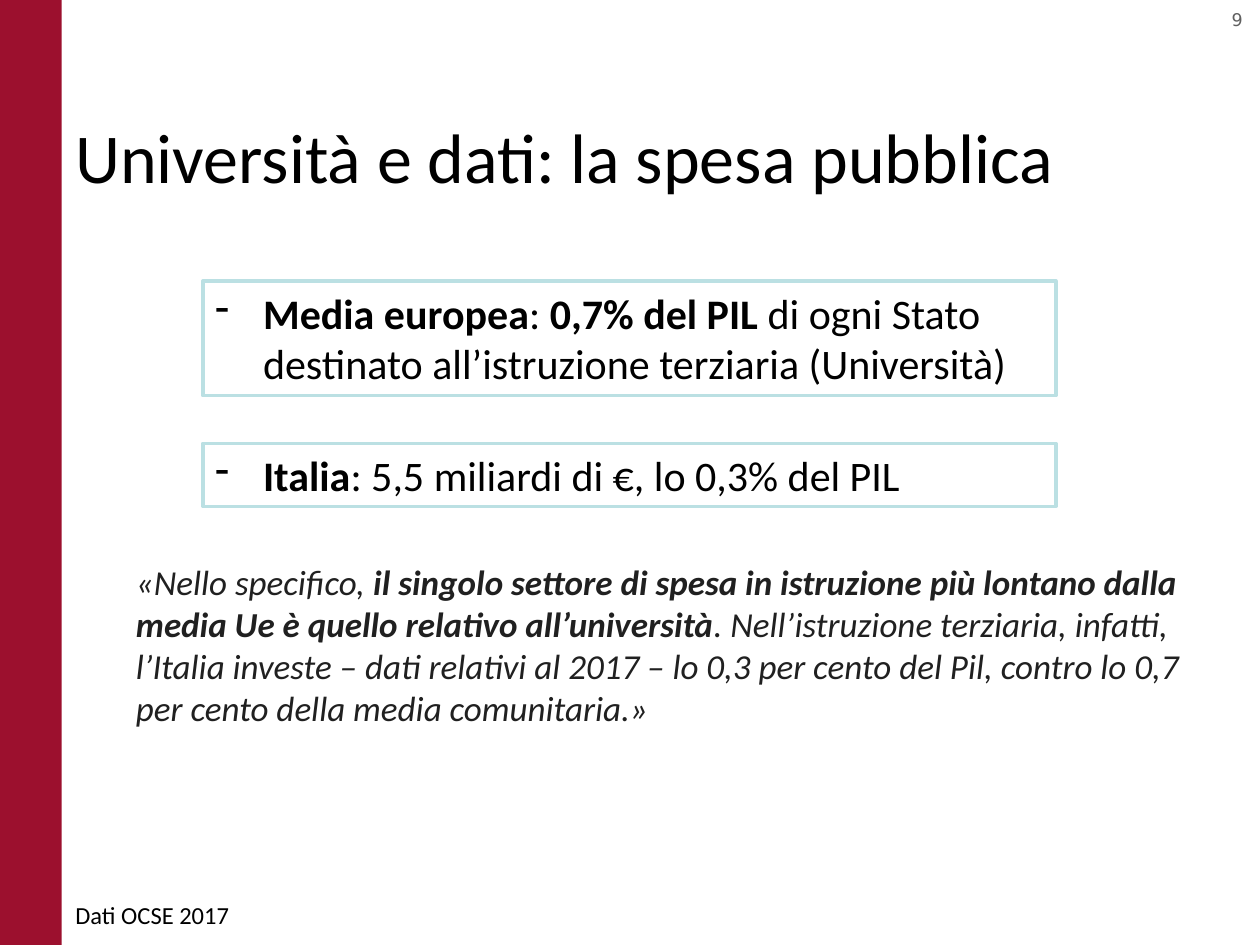
import pptx
import pptx.util
import pptx.dml.color
import pptx.enum.shapes
import pptx.enum.text
import pptx.oxml
import pptx.oxml.ns
from pptx.util import Inches

HUES = {"bar": "9C102E", "edge": "BBE0E3", "paper": "FFFFFF",
        "ink": "000000", "quote": "202020", "page": "606060"}
RECT = pptx.enum.shapes.MSO_SHAPE.RECTANGLE
ALIGN = pptx.enum.text.PP_ALIGN
ANCHOR = pptx.enum.text.MSO_ANCHOR


def tint(name):
    """Return the named colour."""
    return pptx.dml.color.RGBColor.from_string(HUES[name])


def write(shape, runs, size, hue="ink", face="Calibri", align=ALIGN.LEFT,
          anchor=ANCHOR.TOP, italic=False, dash=False):
    """Fill a shape with one paragraph of (text, bold) runs."""
    frame = shape.text_frame
    frame.word_wrap = True
    frame.vertical_anchor = anchor
    para = frame.paragraphs[0]
    para.alignment = align
    if dash:
        props = para._p.get_or_add_pPr()
        props.set("marL", str(Inches(0.38)))
        props.set("indent", str(-Inches(0.38)))
        mark = pptx.oxml.parse_xml(
            f'<a:buChar {pptx.oxml.ns.nsdecls("a")} char="-"/>')
        props.append(mark)
    font = para.font
    font.name, font.size, font.italic = face, pptx.util.Pt(size), italic
    font.color.rgb = tint(hue)
    for text, bold in runs:
        run = para.add_run()
        run.text = text
        if bold:
            run.font.bold = True


def add_text(slide, box, runs, size, **style):
    """Place a text box."""
    shape = slide.shapes.add_textbox(*map(Inches, box))
    write(shape, runs, size, **style)


def add_rect(slide, box, fill, edge=None):
    """Place a plain rectangle and return it."""
    shape = slide.shapes.add_shape(RECT, *map(Inches, box))
    shape.shadow.inherit = False
    shape.fill.solid()
    shape.fill.fore_color.rgb = tint(fill)
    if edge:
        shape.line.color.rgb = tint(edge)
        shape.line.width = pptx.util.Pt(2)
    else:
        shape.line.fill.background()
    return shape


def add_frame(slide, box):
    """Place the side bar, page number, title and source line."""
    left, top, wide, high = box
    add_rect(slide, (left, top, 0.49, high), "bar")
    add_text(slide, (left + wide - 0.53, top + 0.02, 0.49, 0.27),
             [("9", False)], 10, hue="page", face="DejaVu Sans",
             align=ALIGN.RIGHT)
    add_text(slide, (left + 0.5, top + 0.61, wide - 1, 1.25),
             [("Università e dati: la spesa pubblica", False)], 40,
             anchor=ANCHOR.MIDDLE)
    add_text(slide, (left + 0.5, top + high - 0.41, 8.44, 0.29),
             [("Dati OCSE 2017", False)], 14)


def add_facts(slide, box):
    """Stack the outlined facts inside the box."""
    left, top, wide, high = box
    facts = [
        (0.91, [("Media europea", True), (": ", False),
                ("0,7% del PIL ", True),
                ("di ogni Stato destinato all’istruzione terziaria "
                 "(Università)", False)]),
        (0.5, [("Italia", True),
               (": 5,5 miliardi di €, lo 0,3% del PIL", False)]),
    ]
    gap = (high - sum(tall for tall, _ in facts)) / (len(facts) - 1)
    for tall, runs in facts:
        shape = add_rect(slide, (left, top, wide, tall), "paper", "edge")
        write(shape, runs, 24, dash=True)
        top += tall + gap


def add_quote(slide, box):
    """Place the quoted passage."""
    add_text(slide, box, [
        ("«Nello specifico, ", False),
        ("il singolo settore di spesa in istruzione più lontano dalla "
         "media Ue è quello relativo all’università", True),
        (". Nell’istruzione terziaria, infatti, l’Italia investe – dati "
         "relativi al 2017 – lo 0,3 per cento del Pil, contro lo 0,7 per "
         "cento della media comunitaria.»", False),
    ], 20, hue="quote", italic=True)


def main():
    """Build and save the slide."""
    deck = pptx.Presentation()
    deck.slide_width, deck.slide_height = Inches(10), Inches(7.5)
    slide = deck.slides.add_slide(deck.slide_layouts[6])
    add_frame(slide, (0, 0, 10, 7.5))
    add_facts(slide, (1.61, 2.23, 6.77, 1.79))
    add_quote(slide, (0.98, 4.4, 8.52, 1.45))
    deck.save("out.pptx")


if __name__ == "__main__":
    main()
